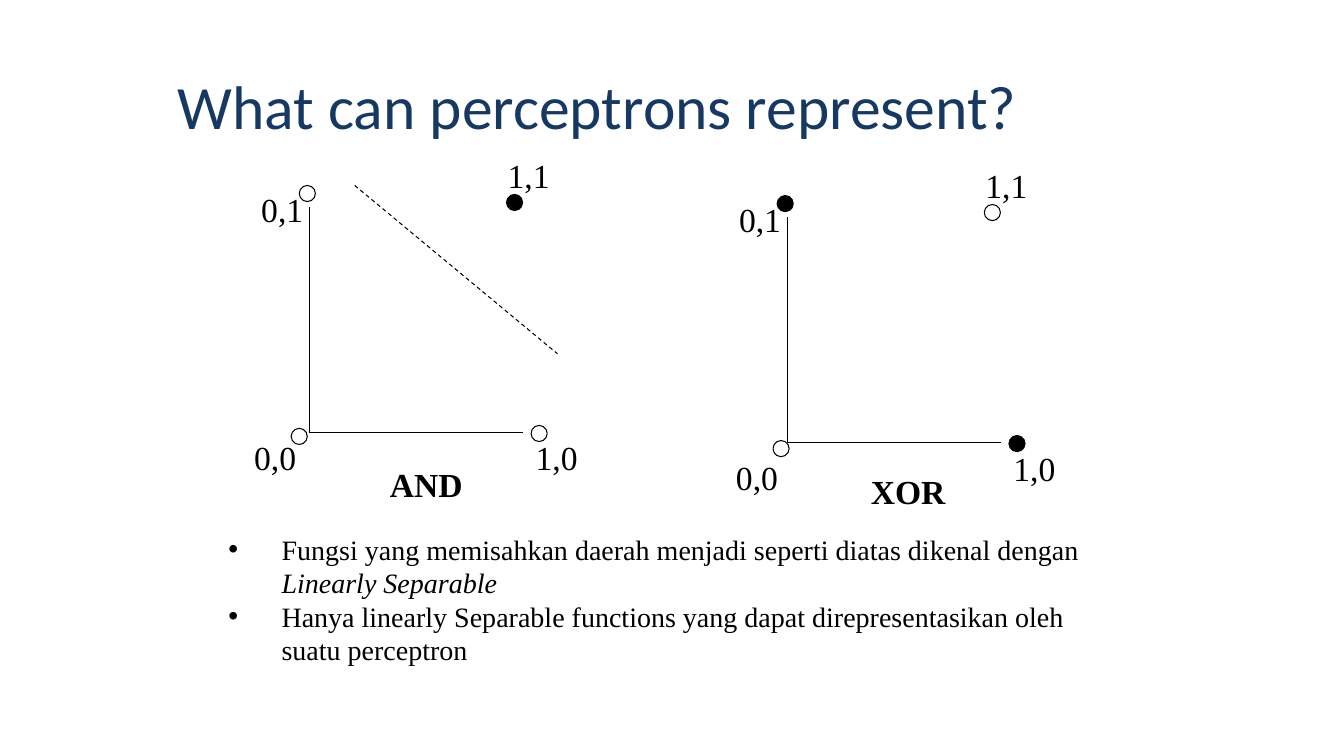
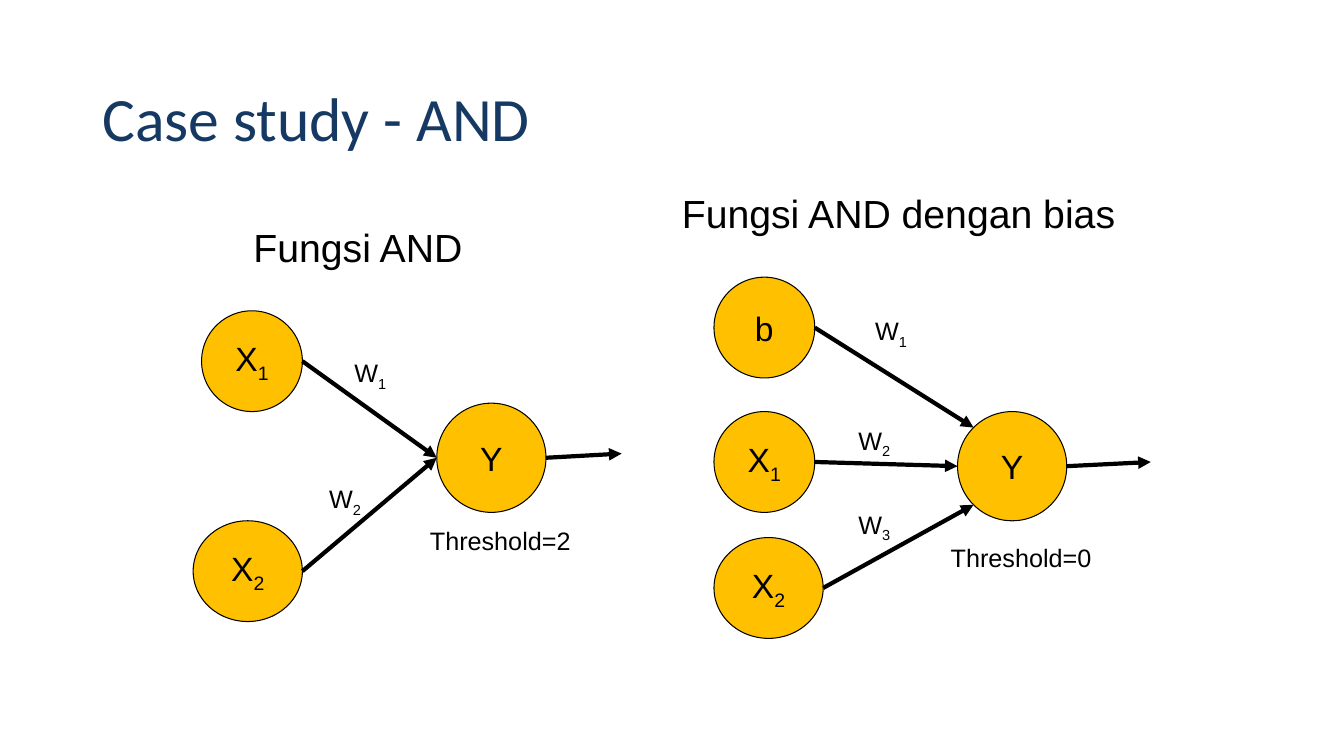
from dataclasses import dataclass
from math import cos, radians, sin
from typing import NamedTuple

from lxml import etree
from pptx import Presentation
from pptx import util as u
from pptx.dml import color
from pptx.enum import dml, shapes, text
from pptx.oxml import ns


@dataclass(frozen=True)
class Theme:
    title: color.RGBColor = color.RGBColor(0x16, 0x39, 0x64)
    ink: color.RGBColor = color.RGBColor(0, 0, 0)
    paper: color.RGBColor = color.RGBColor(255, 255, 255)
    neuron: color.RGBColor = color.RGBColor(0xFF, 0xC0, 0)
    title_font: str = "Calibri"
    plot_font: str = "Times New Roman"
    network_font: str = "Arial"
    title_size: float = 44
    heading_size: float = 28
    label_size: float = 24
    body_size: float = 20
    note_size: float = 18
    thin: float = 0.75
    thick: float = 3


THEME = Theme()


class Point(NamedTuple):
    x: float
    y: float

    def shift(self, offset: "Point") -> "Point":
        return Point(self.x + offset.x, self.y + offset.y)


class Box(NamedTuple):
    left: float
    top: float
    width: float
    height: float

    def points(self) -> list[u.Length]:
        return [u.Pt(value) for value in self]

    def rim(self, degrees: float) -> Point:
        """Point on the inscribed ellipse, clockwise from the right."""
        angle = radians(degrees)
        return Point(self.left + self.width / 2 * (1 + cos(angle)),
                     self.top + self.height / 2 * (1 + sin(angle)))


class Run(NamedTuple):
    text: str
    italic: bool = False
    subscript: bool = False


class Corner(NamedTuple):
    """A truth-table input, placed relative to the plot's origin."""
    label: str
    label_offset: Point
    dot_offset: Point


@dataclass(frozen=True)
class Plot:
    name: str
    name_offset: Point
    origin: Point
    zero: Corner
    true_inputs: set[str]


@dataclass(frozen=True)
class Input:
    symbol: str
    box: Box
    weight_at: Point
    target_angle: float = 180


@dataclass(frozen=True)
class Network:
    heading: str
    heading_box: Box
    inputs: list[Input]
    output: Box
    output_reach: float
    threshold: str
    threshold_at: Point


AXIS_UP, AXIS_RIGHT = 161.3, 152.6
DOT = 11.5
OUTER_CORNERS = [
    Corner("0,1", Point(-48.2, -177.5), Point(-7.2, -176.4)),
    Corner("1,0", Point(147.8, 0), Point(158.4, -5)),
    Corner("1,1", Point(127.8, -201.5), Point(140.8, -170)),
]
PLOTS = [
    Plot("AND", Point(26.6, 18.7), Point(221, 308.9),
         Corner("0,0", Point(-53.3, 0), Point(-13, -2.9)), {"1,1"}),
    Plot("XOR", Point(29.5, 16.6), Point(562.3, 316.1),
         Corner("0,0", Point(-50.4, 6.5), Point(-10.1, -1.4)), {"0,1", "1,0"}),
]
SEPARATOR = Point(253.4, 132.5), Point(398.2, 252.7)
CONCLUSIONS = [
    [Run("Fungsi yang memisahkan daerah menjadi seperti diatas dikenal dengan "),
     Run("Linearly Separable", italic=True)],
    [Run("Hanya linearly Separable functions yang dapat direpresentasikan "
         "oleh suatu perceptron")],
]
NETWORKS = [
    Network("Fungsi AND", Box(174, 156, 165.6, 41),
            [Input("X1", Box(144, 222, 72, 72), Point(246, 252)),
             Input("X2", Box(138, 372, 78, 72), Point(228, 342))],
            Box(312, 288, 78, 78), 54, "Threshold=2", Point(300, 372)),
    Network("Fungsi AND dengan bias", Box(480, 132, 326, 41),
            [Input("b", Box(510, 198, 72, 72), Point(618, 222), 225),
             Input("X1", Box(510, 294, 72, 72), Point(606, 300)),
             Input("X2", Box(510, 384, 78, 72), Point(606, 360), 135)],
            Box(684, 294, 78, 78), 60, "Threshold=0", Point(672, 384)),
]


def symbol_runs(symbol: str) -> list[Run]:
    """Set the digits after the first letter as a subscript."""
    runs = [Run(symbol[0])]
    if symbol[1:]:
        runs.append(Run(symbol[1:], subscript=True))
    return runs


def add_bullet(paragraph, indent: float) -> None:
    properties = paragraph._p.get_or_add_pPr()
    properties.set("marL", str(u.Pt(indent)))
    properties.set("indent", str(-u.Pt(indent)))
    etree.SubElement(properties, ns.qn("a:buFont")).set("typeface", "Arial")
    etree.SubElement(properties, ns.qn("a:buChar")).set("char", "•")


def write(shape, paragraphs: list[list[Run]], *, font: str, size: float,
          ink: color.RGBColor = THEME.ink, bold: bool = False,
          align=text.PP_ALIGN.LEFT, anchor=text.MSO_ANCHOR.TOP,
          wrap: bool = True, line_spacing: float = 1,
          space_after: float = 0, indent: float = 0) -> None:
    frame = shape.text_frame
    frame.word_wrap = wrap
    frame.vertical_anchor = anchor
    for index, runs in enumerate(paragraphs):
        paragraph = frame.add_paragraph() if index else frame.paragraphs[0]
        paragraph.alignment = align
        paragraph.line_spacing = line_spacing
        paragraph.space_after = u.Pt(space_after)
        if indent:
            add_bullet(paragraph, indent)
        for part in runs:
            run = paragraph.add_run()
            run.text = part.text
            run.font.name = font
            run.font.size = u.Pt(size)
            run.font.bold = bold
            run.font.italic = part.italic
            run.font.color.rgb = ink
            if part.subscript:
                run._r.get_or_add_rPr().set("baseline", "-25000")


def add_text(slide, box: Box, content: str | list[list[Run]], **style) -> None:
    paragraphs = [[Run(content)]] if isinstance(content, str) else content
    write(slide.shapes.add_textbox(*box.points()), paragraphs, **style)


def add_title(slide, box: Box, title: str, **style) -> None:
    add_text(slide, box, title, font=THEME.title_font, size=THEME.title_size,
             ink=THEME.title, line_spacing=0.9, **style)


def add_ellipse(slide, box: Box, fill: color.RGBColor):
    shape = slide.shapes.add_shape(shapes.MSO_SHAPE.OVAL, *box.points())
    shape.shadow.inherit = False
    shape.fill.solid()
    shape.fill.fore_color.rgb = fill
    shape.line.color.rgb = THEME.ink
    shape.line.width = u.Pt(THEME.thin)
    return shape


def add_line(slide, start: Point, end: Point, *, width: float = THEME.thin,
             dashed: bool = False, arrow: bool = False) -> None:
    connector = slide.shapes.add_connector(
        shapes.MSO_CONNECTOR.STRAIGHT, *[u.Pt(value) for value in (*start, *end)])
    connector.line.color.rgb = THEME.ink
    connector.line.width = u.Pt(width)
    if dashed:
        connector.line.dash_style = dml.MSO_LINE.DASH
    properties = connector._element.spPr
    if arrow:
        outline = properties.find(ns.qn("a:ln"))
        etree.SubElement(outline, ns.qn("a:tailEnd")).set("type", "triangle")
    etree.SubElement(properties, ns.qn("a:effectLst"))


def add_neuron(slide, box: Box, symbol: str) -> None:
    write(add_ellipse(slide, box, THEME.neuron), [symbol_runs(symbol)],
          font=THEME.network_font, size=THEME.label_size, wrap=False,
          align=text.PP_ALIGN.CENTER, anchor=text.MSO_ANCHOR.MIDDLE)


def draw_plot(slide, plot: Plot) -> None:
    label_style = dict(font=THEME.plot_font, size=THEME.label_size,
                       align=text.PP_ALIGN.CENTER)
    for axis in (Point(0, -AXIS_UP), Point(AXIS_RIGHT, 0)):
        add_line(slide, plot.origin, plot.origin.shift(axis))
    for corner in (plot.zero, *OUTER_CORNERS):
        label_at = plot.origin.shift(corner.label_offset)
        add_text(slide, Box(*label_at, 57.6, 33.8), corner.label, **label_style)
        fill = THEME.ink if corner.label in plot.true_inputs else THEME.paper
        add_ellipse(slide, Box(*plot.origin.shift(corner.dot_offset), DOT, DOT), fill)
    name_at = plot.origin.shift(plot.name_offset)
    add_text(slide, Box(*name_at, 113.8, 38.2), plot.name, bold=True, **label_style)


def draw_network(slide, network: Network) -> None:
    note_style = dict(font=THEME.network_font, size=THEME.note_size)
    add_text(slide, network.heading_box, network.heading, wrap=False,
             font=THEME.network_font, size=THEME.heading_size)
    add_neuron(slide, network.output, "Y")
    for number, source in enumerate(network.inputs, start=1):
        add_neuron(slide, source.box, source.symbol)
        add_line(slide, source.box.rim(0), network.output.rim(source.target_angle),
                 width=THEME.thick, arrow=True)
        add_text(slide, Box(*source.weight_at, 48, 29),
                 [symbol_runs(f"W{number}")], **note_style)
    exit_point = network.output.rim(0)
    add_line(slide, exit_point, exit_point.shift(Point(network.output_reach, -3)),
             width=THEME.thick, arrow=True)
    add_text(slide, Box(*network.threshold_at, 115, 29), network.threshold,
             wrap=False, **note_style)


def build_representation(slide) -> None:
    add_title(slide, Box(120, 41, 720, 64.8), "What can perceptrons represent?",
              anchor=text.MSO_ANCHOR.BOTTOM, space_after=3)
    for plot in PLOTS:
        draw_plot(slide, plot)
    add_line(slide, *SEPARATOR, dashed=True)
    add_text(slide, Box(156, 376.5, 630, 103), CONCLUSIONS,
             font=THEME.plot_font, size=THEME.body_size, indent=38)


def build_case_study(slide) -> None:
    add_title(slide, Box(66, 40.3, 828, 93), "Case study - AND",
              anchor=text.MSO_ANCHOR.MIDDLE)
    for network in NETWORKS:
        draw_network(slide, network)


def main() -> None:
    presentation = Presentation()
    presentation.slide_width = u.Pt(960)
    presentation.slide_height = u.Pt(540)
    blank = presentation.slide_layouts[6]
    for build in (build_representation, build_case_study):
        build(presentation.slides.add_slide(blank))
    presentation.save("out.pptx")


if __name__ == "__main__":
    main()
